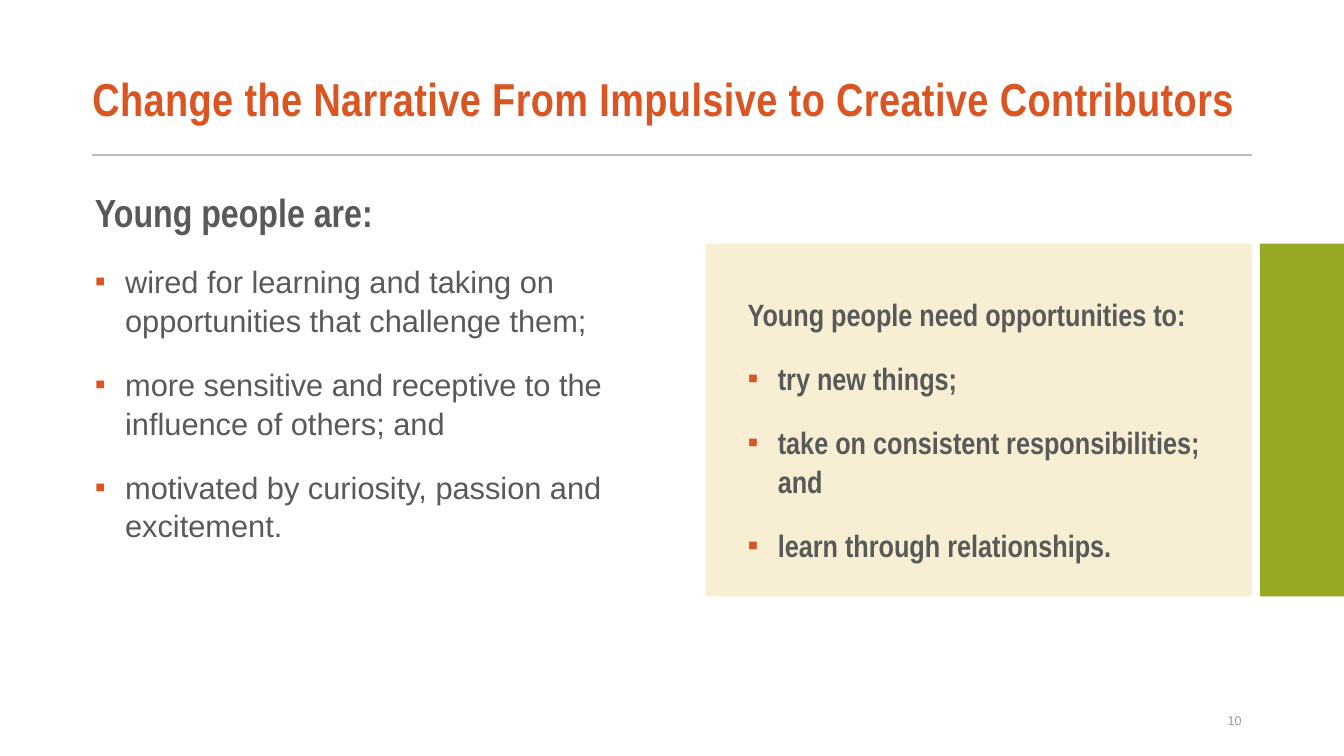
from lxml import etree
from pptx import Presentation
from pptx.dml.color import RGBColor
from pptx.enum.shapes import MSO_CONNECTOR, MSO_SHAPE
from pptx.enum.text import MSO_ANCHOR, PP_ALIGN
from pptx.oxml.ns import qn
from pptx.util import Inches, Pt

STRAIGHT = MSO_CONNECTOR.STRAIGHT
RECTANGLE = MSO_SHAPE.RECTANGLE
TOP, MIDDLE = MSO_ANCHOR.TOP, MSO_ANCHOR.MIDDLE
LEFT, RIGHT = PP_ALIGN.LEFT, PP_ALIGN.RIGHT

COLORS = {"accent": "DA5521", "text": "595959", "rule": "BDBDBD",
          "number": "9B9B9B", "panel": "F7EED4", "band": "97A825"}
BODY, NARROW = "Arial", "Arial Narrow"
COLUMNS, ROWS = 16, 9
INDENT = Inches(0.3)


def color(name):
    return RGBColor.from_string(COLORS[name])


def add_bullet(para):
    properties = para._p.get_or_add_pPr()
    properties.set("marL", str(INDENT))
    properties.set("indent", str(-INDENT))
    tint = etree.SubElement(properties, qn("a:buClr"))
    etree.SubElement(tint, qn("a:srgbClr"), val=COLORS["accent"])
    etree.SubElement(properties, qn("a:buFont"), typeface=BODY)
    etree.SubElement(properties, qn("a:buChar"), char="▪")


def write(para, text, *, size, font=BODY, ink="text", bold=False, tracking=None,
          align=LEFT, line=None, before=None, bullet=False):
    para.alignment = align
    if line:
        para.line_spacing = line
    if before:
        para.space_before = Pt(before)
    if bullet:
        add_bullet(para)
    span = para.add_run()
    span.text = text
    span.font.name, span.font.size, span.font.bold = font, Pt(size), bold
    span.font.color.rgb = color(ink)
    if tracking:
        span.font._element.set("spc", str(round(tracking * 100)))


class Page:
    """One slide measured in grid columns and rows."""

    def __init__(self, deck):
        self.slide = deck.slides.add_slide(deck.slide_layouts[6])
        self.column = deck.slide_width / COLUMNS
        self.row = deck.slide_height / ROWS

    def place(self, left, top, width, height):
        return (round(left * self.column), round(top * self.row),
                round(width * self.column), round(height * self.row))

    def rule(self, left, right, top):
        start, level, end, _ = self.place(left, top, right, 0)
        line = self.slide.shapes.add_connector(STRAIGHT, start, level, end, level)
        line.line.color.rgb = color("rule")
        line.line.width = Pt(1.5)
        etree.SubElement(line._element.spPr, qn("a:effectLst"))

    def block(self, area, fill):
        shape = self.slide.shapes.add_shape(RECTANGLE, *self.place(*area))
        shape.shadow.inherit = False
        shape.fill.solid()
        shape.fill.fore_color.rgb = color(fill)
        shape.line.fill.background()

    def text(self, area, text, anchor=TOP, inset=0, **style):
        frame = self.slide.shapes.add_textbox(*self.place(*area)).text_frame
        frame.word_wrap = True
        frame.vertical_anchor = anchor
        frame.margin_left = Inches(inset)
        write(frame.paragraphs[0], text, **style)
        return frame

    def bullet_list(self, area, heading, heading_size, items, **style):
        frame = self.text(area, heading, size=heading_size, font=NARROW,
                          bold=True, line=1.05)
        for item in items:
            write(frame.add_paragraph(), item, size=22, line=1.05, before=18,
                  bullet=True, **style)


def main():
    deck = Presentation()
    deck.slide_width, deck.slide_height = Inches(13.33), Inches(7.5)
    page = Page(deck)

    # Title, rule and slide number
    page.rule(1.1, 14.9, 1.85)
    page.text((1.1, 0.65, 13.88, 1.14),
              "Change the Narrative From Impulsive to Creative Contributors",
              anchor=MIDDLE, size=33, font=NARROW, ink="accent", bold=True,
              tracking=0.3, line=0.87)
    page.text((11.3, 8.34, 3.6, 0.48), "10", anchor=MIDDLE, inset=0.1, size=9,
              ink="number", align=RIGHT)

    # Left column
    page.bullet_list((1.13, 2.16, 6.86, 5.14), "Young people are:", 28, [
        "wired for learning and taking on opportunities that challenge them;",
        "more sensitive and receptive to the influence of others; and",
        "motivated by curiosity, passion and excitement.",
    ])

    # Panel with its edge band
    page.block((8.4, 2.9, 6.5, 4.2), "panel")
    page.block((15, 2.9, 1, 4.2), "band")
    page.bullet_list((8.9, 3.44, 5.75, 2.96), "Young people need opportunities to:", 22, [
        "try new things;",
        "take on consistent responsibilities; and",
        "learn through relationships.",
    ], font=NARROW, bold=True)

    deck.save("out.pptx")


if __name__ == "__main__":
    main()
